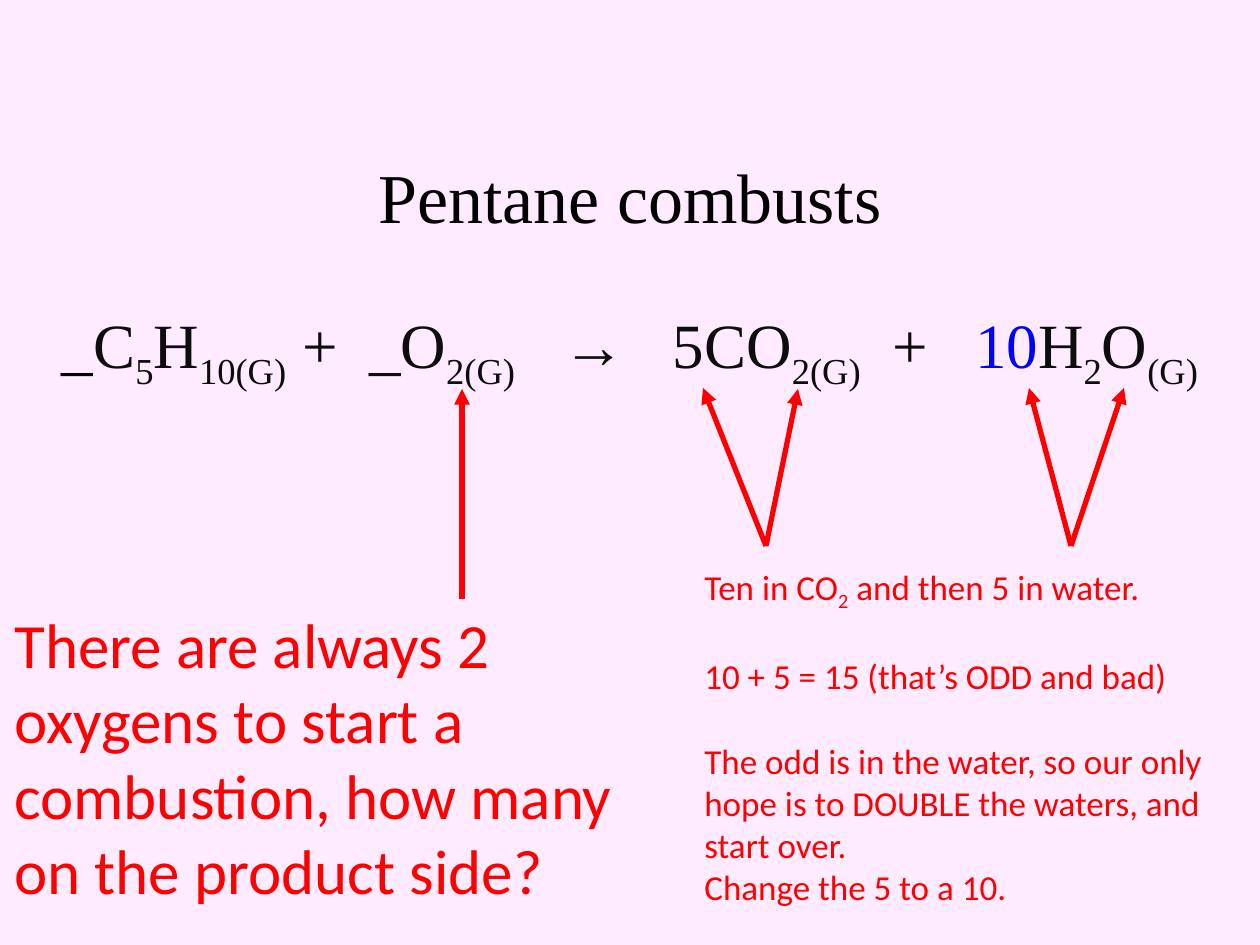
from dataclasses import dataclass

from lxml import etree
from pptx import Presentation
from pptx.dml.color import RGBColor
from pptx.enum.shapes import MSO_CONNECTOR
from pptx.enum.text import MSO_ANCHOR, MSO_AUTO_SIZE, PP_ALIGN
from pptx.oxml.ns import qn
from pptx.util import Pt

STRAIGHT = MSO_CONNECTOR.STRAIGHT
TOP = MSO_ANCHOR.TOP
FIXED = MSO_AUTO_SIZE.NONE
LEFT, CENTER = PP_ALIGN.LEFT, PP_ALIGN.CENTER
SCALE = 914400 / 126


@dataclass(frozen=True)
class Theme:
    back: str = "FFEBFF"
    black: str = "000000"
    ink: str = "0D0D0D"
    blue: str = "0000FF"
    red: str = "FF0000"
    serif: str = "Times New Roman"
    sans: str = "Calibri"
    title: int = 40
    large: int = 36
    small: int = 20
    line: int = 3


THEME = Theme()

EQUATION = [
    ("_", THEME.black, ""), ("C", THEME.ink, ""), ("5", THEME.ink, "sub"),
    ("H", THEME.ink, ""), ("10(G)", THEME.ink, "sub"), (" +", THEME.ink, ""),
    (" ", THEME.ink, "wide"), ("_O", THEME.ink, ""), ("2(G)", THEME.ink, "sub"),
    (" ", THEME.ink, "broad"), ("→", THEME.ink, ""), (" ", THEME.ink, "broad"),
    ("5CO", THEME.ink, ""), ("2(G)", THEME.ink, "sub"), (" ", THEME.ink, "wide"),
    ("+", THEME.ink, ""), (" ", THEME.ink, "broad"), ("10", THEME.blue, ""),
    ("H", THEME.ink, ""), ("2", THEME.ink, "sub"), ("O", THEME.ink, ""),
    ("(G)", THEME.ink, "sub"),
]
NOTES = [
    ([("Ten in CO", None, ""), ("2", None, "sub"),
      (" and then 5 in water.", None, "")], 0),
    ([("10 + 5 = 15 (that’s ODD and bad)", None, "")], 24),
    ([("The odd is in the water, so our only hope is to DOUBLE the waters, "
       "and start over.", None, "")], 24),
    ([("Change the 5 to a 10.", None, "")], 0),
]
QUESTION = ("There are always 2 oxygens to start a combustion, "
            "how many on the product side?")
STYLES = {
    "sub": ("baseline", "-25000"),
    "wide": ("spc", "900"),
    "broad": ("spc", "1800"),
}
ARROWS = [
    ((462, 599), [(462, 389)]),
    ((766, 546), [(798, 389), (703, 388)]),
    ((1071, 546), [(1124, 388), (1029, 388)]),
]


def px(n):
    return round(n * SCALE)


def rgb(color):
    return RGBColor.from_string(color)


def place(shape, box):
    shape.left, shape.top, shape.width, shape.height = map(px, box)
    frame = shape.text_frame
    frame.word_wrap = True
    frame.auto_size = FIXED
    frame.vertical_anchor = TOP
    return frame


def add_box(slide, box):
    return place(slide.shapes.add_textbox(0, 0, 0, 0), box)


def fill_para(para, runs, face, size, color=None, gap=0, align=LEFT):
    para.alignment = align
    para.space_before = Pt(gap)
    font = para.font
    font.name, font.size = face, Pt(size)
    if color:
        font.color.rgb = rgb(color)
    for text, tint, style in runs:
        run = para.add_run()
        run.text = text
        if tint:
            run.font.color.rgb = rgb(tint)
        if style:
            run.font._element.set(*STYLES[style])


def add_arrow(slide, start, end):
    arrow = slide.shapes.add_connector(STRAIGHT, *map(px, start + end))
    arrow.line.color.rgb = rgb(THEME.red)
    arrow.line.width = Pt(THEME.line)
    head = etree.SubElement(arrow.line._get_or_add_ln(), qn("a:tailEnd"))
    head.set("type", "triangle")
    etree.SubElement(arrow._element.spPr, qn("a:effectLst"))


def add_title(slide):
    frame = place(slide.shapes.title, (0, 147, 1260, 242))
    fill_para(frame.paragraphs[0], [("Pentane combusts", None, "")],
              THEME.serif, THEME.title, THEME.black, align=CENTER)
    fill_para(frame.add_paragraph(), EQUATION, THEME.serif, THEME.large,
              gap=39, align=CENTER)


def add_notes(slide):
    frame = add_box(slide, (692, 559, 553, 352))
    for i, (runs, gap) in enumerate(NOTES):
        para = frame.add_paragraph() if i else frame.paragraphs[0]
        fill_para(para, runs, THEME.sans, THEME.small, THEME.red, gap)


def main():
    deck = Presentation()
    deck.slide_width, deck.slide_height = px(1260), px(945)
    slide = deck.slides.add_slide(deck.slide_layouts[5])
    fill = slide.background.fill
    fill.solid()
    fill.fore_color.rgb = rgb(THEME.back)

    add_title(slide)
    ask = add_box(slide, (2, 599, 683, 318))
    fill_para(ask.paragraphs[0], [(QUESTION, None, "")],
              THEME.sans, THEME.large, THEME.red)
    for start, ends in ARROWS:
        for end in ends:
            add_arrow(slide, start, end)
    add_notes(slide)
    deck.save("out.pptx")


if __name__ == "__main__":
    main()
